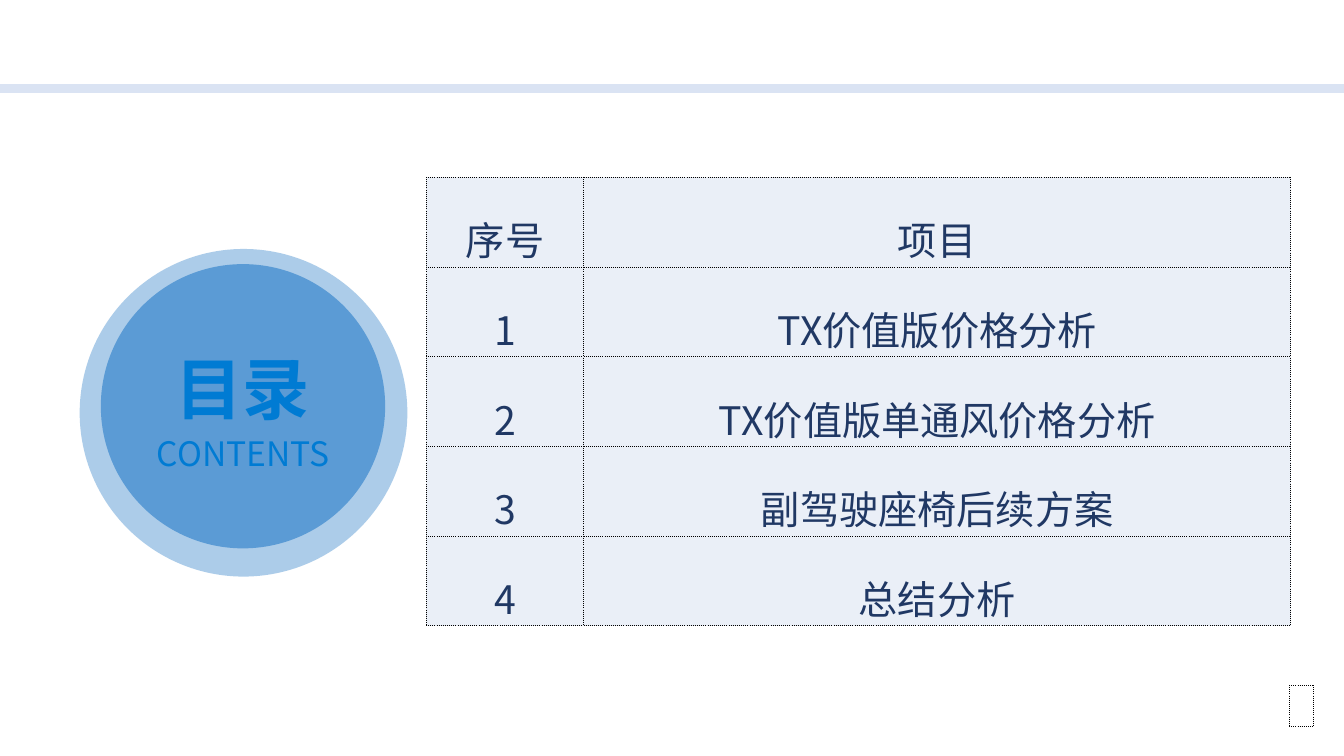
from lxml import etree
from pptx import Presentation
from pptx.dml.color import RGBColor
from pptx.enum.shapes import MSO_CONNECTOR as Connector, MSO_SHAPE as Shape
from pptx.enum.text import MSO_ANCHOR as Anchor, PP_ALIGN as Align
from pptx.oxml import parse_xml
from pptx.oxml.ns import nsdecls, qn
from pptx.util import Inches, Pt

FONT = "Noto Sans CJK SC"
BLUE = "5B9BD5"
ENTRIES = [
    ("序号", "项目"),
    ("1", "TX价值版价格分析"),
    ("2", "TX价值版单通风价格分析"),
    ("3", "副驾驶座椅后续方案"),
    ("4", "总结分析"),
]
CELL_FORMAT = {
    "vertical_anchor": Anchor.BOTTOM,
    "margin_left": Inches(0.01),
    "margin_right": Inches(0.01),
    "margin_top": Inches(0.01),
    "margin_bottom": 0,
}


def rgb(color):
    return RGBColor.from_string(color)


def apply_format(target, values):
    for name, value in values.items():
        setattr(target, name, value)


def write(para, text, size, color, bold=False):
    """Put one centred run into a paragraph."""
    para.alignment = Align.CENTER
    span = para.add_run()
    span.text = text
    apply_format(span.font, {"name": FONT, "size": Pt(size), "bold": bold})
    span.font.color.rgb = rgb(color)
    etree.SubElement(span.font._element, qn("a:ea"), typeface=FONT)


def add_rule(page, top, width):
    rule = page.shapes.add_connector(
        Connector.STRAIGHT, 0, Inches(top), Inches(width), Inches(top))
    rule.line.color.rgb = rgb("DAE3F3")
    rule.line.width = Pt(6)
    etree.SubElement(rule._element.spPr, qn("a:effectLst"))


def add_disc(page, left, top, size, color, alpha=100):
    """Draw a borderless circle; alpha is its opacity in percent."""
    disc = page.shapes.add_shape(
        Shape.OVAL, *map(Inches, (left, top, size, size)))
    disc.shadow.inherit = False
    disc.fill.solid()
    disc.fill.fore_color.rgb = rgb(color)
    disc.line.fill.background()
    if alpha < 100:
        tint = disc._element.spPr.find(".//" + qn("a:srgbClr"))
        etree.SubElement(tint, qn("a:alpha"), val=str(alpha * 1000))
    return disc


def add_badge(page, left, top, size):
    add_disc(page, left, top, size, BLUE, alpha=50)
    disc = add_disc(page, left + 0.21, top + 0.15, size - 0.43, BLUE)
    frame = disc.text_frame
    apply_format(frame, {"word_wrap": True, "vertical_anchor": Anchor.MIDDLE})
    title, subtitle = frame.paragraphs[0], frame.add_paragraph()
    title.line_spacing = subtitle.line_spacing = 1.1
    write(title, "目录", 48, "007BD3", bold=True)
    write(subtitle, "CONTENTS", 24, "007BD3")


def add_borders(cell):
    """Give all four sides of a cell a dotted black line."""
    properties = cell._tc.get_or_add_tcPr()
    for side in "LRTB":
        properties.append(parse_xml(
            f'<a:ln{side} {nsdecls("a")} w="{Pt(0.75)}"><a:solidFill>'
            '<a:srgbClr val="000000"/></a:solidFill>'
            f'<a:prstDash val="sysDot"/></a:ln{side}>'))


def add_grid(page, left, top, widths, row_height, row_count):
    """Add an unfilled table with dotted borders."""
    table = page.shapes.add_table(
        row_count, len(widths), Inches(left), Inches(top),
        Inches(sum(widths)), Inches(row_height * row_count)).table
    apply_format(table, {"first_row": False, "horz_banding": False})
    for column, width in zip(table.columns, widths):
        column.width = Inches(width)
    for row in table.rows:
        row.height = Inches(row_height)
    for cell in table.iter_cells():
        add_borders(cell)
        cell.fill.background()
    return table


def add_contents(page, left, top):
    table = add_grid(page, left, top, (1.56, 7.01), 0.89, len(ENTRIES))
    for row, entry in zip(table.rows, ENTRIES):
        for cell, text in zip(row.cells, entry):
            apply_format(cell, CELL_FORMAT)
            cell.fill.solid()
            cell.fill.fore_color.rgb = rgb("EAEFF7")
            write(cell.text_frame.paragraphs[0], text, 28, "203864")


def main():
    deck = Presentation()
    apply_format(deck, {"slide_width": Inches(13.33),
                        "slide_height": Inches(7.5)})
    page = deck.slides.add_slide(deck.slide_layouts[6])
    add_rule(page, 0.88, 13.33)
    add_badge(page, 0.79, 2.47, 3.25)
    add_contents(page, 4.23, 1.76)
    add_grid(page, 12.79, 6.8, (0.23,), 0.4, 1)
    deck.save("out.pptx")


if __name__ == "__main__":
    main()
